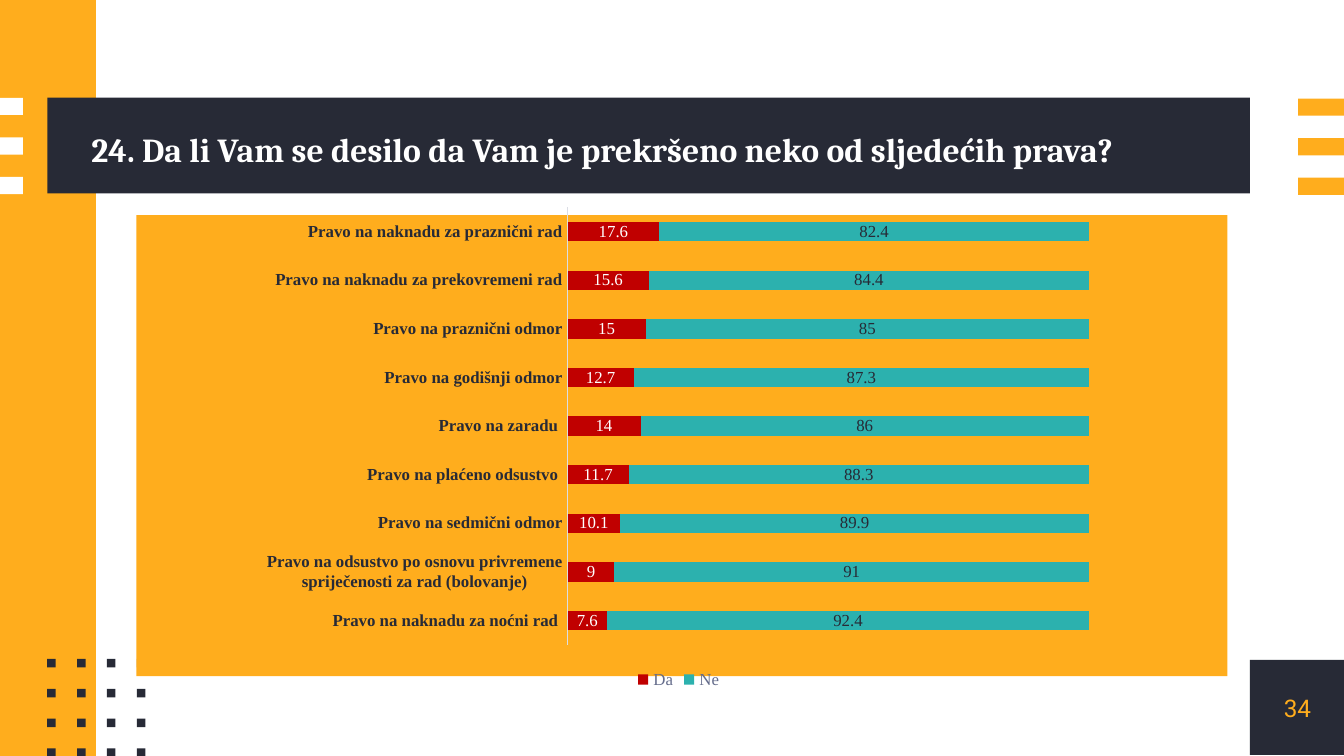
import itertools

import pptx
import pptx.chart.data
import pptx.dml.color
import pptx.enum.chart
import pptx.enum.shapes
import pptx.enum.text
import pptx.oxml
import pptx.oxml.ns
import pptx.util

Pt = pptx.util.Pt

TITLE = "24. Da li Vam se desilo da Vam je prekršeno neko od sljedećih prava?"
PAGE_NUMBER = "34"
RIGHTS = [  # right, percent answering Da, percent answering Ne
    ("Pravo na naknadu za praznični rad", 17.6, 82.4),
    ("Pravo na naknadu za prekovremeni rad", 15.6, 84.4),
    ("Pravo na praznični odmor", 15, 85),
    ("Pravo na godišnji odmor", 12.7, 87.3),
    ("Pravo na zaradu ", 14, 86),
    ("Pravo na plaćeno odsustvo ", 11.7, 88.3),
    ("Pravo na sedmični odmor", 10.1, 89.9),
    ("Pravo na odsustvo po osnovu privremene spriječenosti za rad (bolovanje)", 9, 91),
    ("Pravo na naknadu za noćni rad ", 7.6, 92.4),
]
ANSWERS = [("Da", "red", "white"), ("Ne", "teal", "navy")]  # name, bar, label
COLORS = {
    "navy": "272A36", "orange": "FFAD1D", "white": "FFFFFF", "red": "C00000",
    "teal": "2CB1AE", "axis": "DBDDE5", "legend": "646C8B",
}
CHART_FONT = "Times New Roman"
PLOT_AREA = {"x": 0.37, "y": 0.02, "w": 0.61, "h": 0.88}  # shares of the chart
PAGE_BOX = (669.6, 353.5, 51, 51)


def rgb(color):
    return pptx.dml.color.RGBColor.from_string(COLORS[color])


def style_font(font, size, color, name, bold=False):
    font.size = Pt(size)
    font.color.rgb = rgb(color)
    font.name = name
    font.bold = bold


def add_rect(slide, box, color):
    rect = slide.shapes.add_shape(
        pptx.enum.shapes.MSO_SHAPE.RECTANGLE, *map(Pt, box))
    rect.shadow.inherit = False
    rect.fill.solid()
    rect.fill.fore_color.rgb = rgb(color)
    rect.line.fill.background()


def write_line(shape, text, align, size, color, font, bold=False):
    frame = shape.text_frame
    frame.word_wrap = True
    frame.auto_size = pptx.enum.text.MSO_AUTO_SIZE.NONE
    frame.vertical_anchor = pptx.enum.text.MSO_ANCHOR.MIDDLE
    frame.margin_left = frame.margin_right = 0
    frame.margin_top = frame.margin_bottom = 0
    paragraph = frame.paragraphs[0]
    paragraph.alignment = align
    run = paragraph.add_run()
    run.text = text
    style_font(run.font, size, color, font, bold)


def add_decoration(slide):
    add_rect(slide, PAGE_BOX, "navy")
    add_rect(slide, (0, 0, 51.4, 405), "orange")
    add_rect(slide, (25.3, 52.3, 644.3, 51.4), "navy")
    for row in range(3):
        top = 52.4 + 21.2 * row
        add_rect(slide, (0, top, 12.3, 9.2), "white")
        add_rect(slide, (695.4, top + 0.4, 24.6, 9.2), "orange")
    for row, column in itertools.product(range(4), repeat=2):
        add_rect(slide, (25.3 + 16 * column, 353 + 16 * row, 4.6, 4.6), "navy")


def add_title(slide):
    title = slide.shapes.title
    slide.shapes._spTree.append(title._element)  # in front of its band
    title.left, title.top, title.width, title.height = map(
        Pt, (49, 54.2, 617.8, 51.2))
    write_line(title, TITLE, pptx.enum.text.PP_ALIGN.LEFT, 18, "white", "Cambria", True)


def fix_plot_area(chart):
    """Pin the inner plot area to PLOT_AREA."""
    plot_area = chart._chartSpace.chart.plotArea
    for old in plot_area.findall(pptx.oxml.ns.qn("c:layout")):
        plot_area.remove(old)
    sizes = "".join(f'<c:{key} val="{share}"/>' for key, share in PLOT_AREA.items())
    plot_area.insert(0, pptx.oxml.parse_xml(
        f'<c:layout {pptx.oxml.ns.nsdecls("c")}><c:manualLayout>'
        '<c:layoutTarget val="inner"/><c:xMode val="edge"/><c:yMode val="edge"/>'
        f'{sizes}</c:manualLayout></c:layout>'))


def add_rights_chart(slide):
    data = pptx.chart.data.CategoryChartData(number_format="General")
    names, *shares = zip(*RIGHTS)
    data.categories = names
    for (answer, _, _), values in zip(ANSWERS, shares):
        data.add_series(answer, values)
    chart = slide.shapes.add_chart(
        pptx.enum.chart.XL_CHART_TYPE.BAR_STACKED,
        *map(Pt, (134.6, 105.8, 458, 266.4)), data).chart
    style_font(chart.font, 10, "navy", CHART_FONT)
    chart.has_title = False
    chart.has_legend = True
    chart.legend.position = pptx.enum.chart.XL_LEGEND_POSITION.BOTTOM
    chart.legend.include_in_layout = False
    style_font(chart.legend.font, 9, "legend", CHART_FONT)

    rights_axis = chart.category_axis
    rights_axis.reverse_order = True
    rights_axis.major_tick_mark = pptx.enum.chart.XL_TICK_MARK.NONE
    rights_axis.format.line.color.rgb = rgb("axis")
    rights_axis.format.line.width = Pt(0.75)
    style_font(rights_axis.tick_labels.font, 9, "navy", CHART_FONT, True)
    percent_axis = chart.value_axis
    percent_axis.minimum_scale, percent_axis.maximum_scale = 0, 100
    percent_axis.has_major_gridlines = False
    percent_axis.visible = False

    plot = chart.plots[0]
    plot.gap_width, plot.overlap = 150, 100
    plot.vary_by_categories = False
    for series, (_, bar_color, label_color) in zip(plot.series, ANSWERS):
        series.format.fill.solid()
        series.format.fill.fore_color.rgb = rgb(bar_color)
        labels = series.data_labels
        labels.show_value = True
        labels.position = pptx.enum.chart.XL_LABEL_POSITION.CENTER
        style_font(labels.font, 9, label_color, CHART_FONT)
    fix_plot_area(chart)


def main():
    deck = pptx.Presentation()
    deck.slide_width, deck.slide_height = Pt(720), Pt(405)
    slide = deck.slides.add_slide(deck.slide_layouts[5])
    add_decoration(slide)
    add_title(slide)
    page_number = slide.shapes.add_textbox(*map(Pt, PAGE_BOX))
    write_line(page_number, PAGE_NUMBER, pptx.enum.text.PP_ALIGN.CENTER,
               13, "orange", "Roboto")
    add_rect(slide, (73, 115.3, 584.6, 247), "orange")
    add_rights_chart(slide)
    deck.save("out.pptx")


if __name__ == "__main__":
    main()
